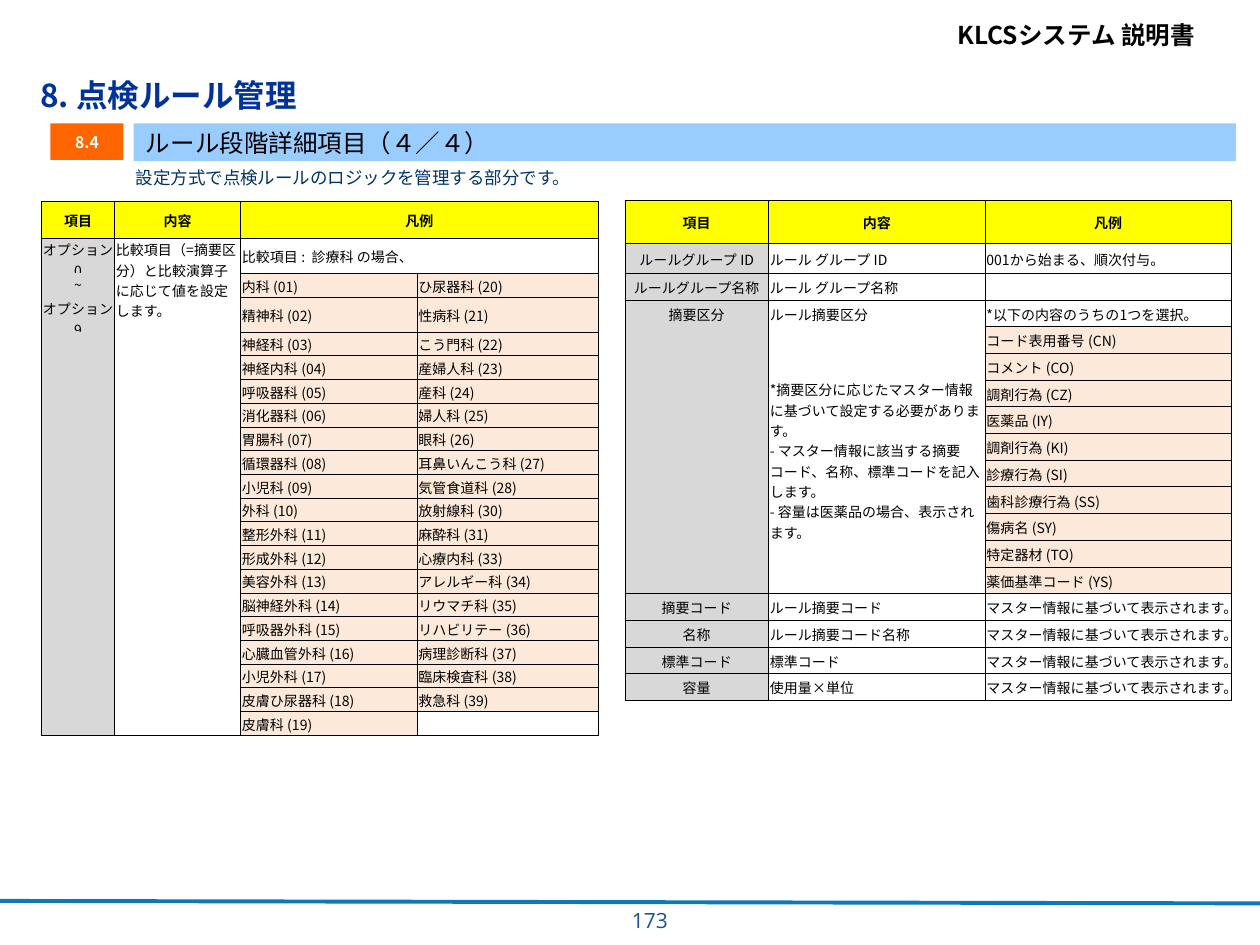
from dataclasses import dataclass

from lxml.etree import SubElement
from pptx import Presentation
from pptx.dml.color import RGBColor
from pptx.enum.shapes import MSO_CONNECTOR, MSO_SHAPE
from pptx.enum.text import MSO_ANCHOR, PP_ALIGN
from pptx.oxml.ns import qn
from pptx.util import Inches, Pt


@dataclass(frozen=True)
class Theme:
    font: str = "Noto Sans CJK JP"
    number_font: str = "Open Sans"
    black: str = "000000"
    white: str = "FFFFFF"
    title: str = "003399"
    note: str = "003366"
    page: str = "125496"
    rule: str = "0C79BC"
    badge: str = "FF6600"
    band: str = "99CCFF"
    header: str = "FFFF00"
    label: str = "D8D8D8"
    choice: str = "FDE9D9"
    table_size: float = 8
    badge_size: float = 9
    note_size: float = 10
    page_size: float = 12
    heading_size: float = 14
    title_size: float = 18


class SlideBuilder:
    def __init__(self, slide, theme):
        self.s = slide
        self.t = theme

    def add_runs(self, p, text, size, color, bold=False, font=None):
        for i, line in enumerate(text.split("\n")):
            if i:
                p.add_line_break()
            r = p.add_run()
            r.text = line
            r.font.size = Pt(size)
            r.font.bold = bold
            r.font.name = font or self.t.font
            r.font.color.rgb = RGBColor.from_string(color)
            SubElement(r.font._element, qn("a:ea"), typeface=font or self.t.font)

    def hang(self, p, indent):
        pPr = p._p.get_or_add_pPr()
        pPr.set("marL", str(Inches(indent)))
        pPr.set("indent", str(-Inches(indent)))

    def text(self, at, text, size, color, bold=False, font=None, align=PP_ALIGN.LEFT,
             wrap=True, indent=0, inset=0.05):
        tf = self.s.shapes.add_textbox(*map(Inches, at)).text_frame
        tf.word_wrap = wrap
        tf.margin_top = tf.margin_bottom = Inches(inset)
        p = tf.paragraphs[0]
        p.alignment = align
        if indent:
            self.hang(p, indent)
        self.add_runs(p, text, size, color, bold, font)

    def box(self, at, fill, text, size, color, bold=False, align=PP_ALIGN.LEFT,
            anchor=MSO_ANCHOR.MIDDLE, wrap=True, indent=0.1):
        sp = self.s.shapes.add_shape(MSO_SHAPE.RECTANGLE, *map(Inches, at))
        sp.shadow.inherit = False
        sp.fill.solid()
        sp.fill.fore_color.rgb = RGBColor.from_string(fill)
        sp.line.fill.background()
        tf = sp.text_frame
        tf.word_wrap = wrap
        tf.vertical_anchor = anchor
        p = tf.paragraphs[0]
        p.alignment = align
        self.hang(p, indent)
        self.add_runs(p, text, size, color, bold)

    def line(self, x1, y1, x2, y2, color, width):
        ln = self.s.shapes.add_connector(MSO_CONNECTOR.STRAIGHT, *map(Inches, (x1, y1, x2, y2)))
        ln.line.color.rgb = RGBColor.from_string(color)
        ln.line.width = Pt(width)
        SubElement(ln._element.spPr, qn("a:effectLst"))

    def borders(self, cell, top, bottom):
        tcPr = cell._tc.get_or_add_tcPr()
        edges = {"lnL": True, "lnR": True, "lnT": top, "lnB": bottom}
        for i, (tag, shown) in enumerate(edges.items()):
            ln = SubElement(tcPr, qn(f"a:{tag}"), w=str(Pt(0.5)))
            tcPr.remove(ln)
            tcPr.insert(i, ln)
            if shown:
                fill = SubElement(ln, qn("a:solidFill"))
                SubElement(fill, qn("a:srgbClr"), val=self.t.black)
            else:
                SubElement(ln, qn("a:noFill"))

    def table(self, left, top, cols, heights, rows, open_rows, choices, merges=(), top_cells=()):
        frame = self.s.shapes.add_table(len(rows), len(cols), Inches(left), Inches(top),
                                        Inches(sum(cols)), Inches(sum(heights)))
        tbl = frame.table
        tbl.first_row = tbl.horz_banding = False
        for col, width in zip(tbl.columns, cols):
            col.width = Inches(width)
        for row, height in zip(tbl.rows, heights):
            row.height = Inches(height)
        first, last = open_rows
        for i, texts in enumerate(rows):
            for j, text in enumerate(texts):
                cell = tbl.cell(i, j)
                cell.margin_left = cell.margin_right = cell.margin_top = Inches(0.01)
                cell.margin_bottom = 0
                cell.vertical_anchor = MSO_ANCHOR.TOP if (i, j) in top_cells else MSO_ANCHOR.MIDDLE
                if i == 0:
                    fill = self.t.header
                elif j == 0:
                    fill = self.t.label
                else:
                    fill = self.t.choice if text and j >= 2 and i in choices else self.t.white
                cell.fill.solid()
                cell.fill.fore_color.rgb = RGBColor.from_string(fill)
                inside = j < 2 and first <= i <= last
                self.borders(cell, not inside or i == first, not inside or i == last)
                p = cell.text_frame.paragraphs[0]
                p.alignment = PP_ALIGN.CENTER if i == 0 or j == 0 else PP_ALIGN.LEFT
                if text:
                    self.add_runs(p, text, self.t.table_size, self.t.black, i == 0)
                else:
                    SubElement(p._p, qn("a:endParaRPr"), sz=str(int(self.t.table_size * 100)))
        for r1, c1, r2, c2 in merges:
            tbl.cell(r1, c1).merge(tbl.cell(r2, c2))


DEPARTMENTS = [
    ("内科 (01)", "ひ尿器科 (20)"), ("精神科 (02)", "性病科 (21)"),
    ("神経科 (03)", "こう門科 (22)"), ("神経内科 (04)", "産婦人科 (23)"),
    ("呼吸器科 (05)", "産科 (24)"), ("消化器科 (06)", "婦人科 (25)"),
    ("胃腸科 (07)", "眼科 (26)"), ("循環器科 (08)", "耳鼻いんこう科 (27)"),
    ("小児科 (09)", "気管食道科 (28)"), ("外科 (10)", "放射線科 (30)"),
    ("整形外科 (11)", "麻酔科 (31)"), ("形成外科 (12)", "心療内科 (33)"),
    ("美容外科 (13)", "アレルギー科 (34)"), ("脳神経外科 (14)", "リウマチ科 (35)"),
    ("呼吸器外科 (15)", "リハビリテー (36)"), ("心臓血管外科 (16)", "病理診断科 (37)"),
    ("小児外科 (17)", "臨床検査科 (38)"), ("皮膚ひ尿器科 (18)", "救急科 (39)"),
    ("皮膚科 (19)", ""),
]
CATEGORIES = ["コード表用番号 (CN)", "コメント (CO)", "調剤行為 (CZ)", "医薬品 (IY)",
              "調剤行為 (KI)", "診療行為 (SI)", "歯科診療行為 (SS)", "傷病名 (SY)",
              "特定器材 (TO)", "薬価基準コード (YS)"]
CATEGORY_NOTE = ("*摘要区分に応じたマスター情報に基づいて設定する必要があります。\n"
                 "- マスター情報に該当する摘要コード、名称、標準コードを記入します。\n"
                 "- 容量は医薬品の場合、表示されます。")
FROM_MASTER = "マスター情報に基づいて表示されます。"


def main():
    prs = Presentation()
    prs.slide_width, prs.slide_height = Inches(10), Inches(7.5)
    t = Theme()
    b = SlideBuilder(prs.slides.add_slide(prs.slide_layouts[6]), t)

    b.line(0, 7.15, 10, 7.17, t.rule, 2.25)
    b.text((7.5, 0.11, 2.16, 0.34), "KLCSシステム 説明書", t.heading_size, t.black, True, wrap=False)
    b.text((0.22, 0.6, 9.74, 0.42), "8. 点検ルール管理", t.title_size, t.title, True,
           indent=0.62, inset=0)
    b.text((4.87, 7.15, 0.53, 0.28), "173", t.page_size, t.page, font=t.number_font,
           align=PP_ALIGN.RIGHT)

    option_labels = ["~", "オプション9"] + [""] * (len(DEPARTMENTS) - 2)
    option_rows = [
        ("項目", "内容", "凡例", ""),
        ("オプション0", "比較項目（=摘要区分）と比較演算子に応じて値を設定します。",
         "比較項目 :  診療科 の場合、", ""),
    ] + [(label, "", *pair) for label, pair in zip(option_labels, DEPARTMENTS)]
    option_heights = [0.29, 0.28, 0.19, 0.27]
    rest = len(option_rows) - len(option_heights)
    option_heights += [(4.23 - sum(option_heights)) / rest] * rest
    b.table(0.33, 1.6, [0.58, 1, 1.4, 1.44], option_heights, option_rows, (1, 20), range(2, 21),
            merges=[(0, 2, 0, 3), (1, 2, 1, 3), (1, 1, 5, 1)],
            top_cells=[(1, 0), (2, 0), (3, 0), (1, 1)])

    rule_rows = [
        ("項目", "内容", "凡例"),
        ("ルールグループ ID", "ルール グループ ID", "001から始まる、順次付与。"),
        ("ルールグループ名称", "ルール グループ名称", ""),
        ("摘要区分", "ルール摘要区分", "*以下の内容のうちの1つを選択。"),
    ]
    rule_rows += [("", CATEGORY_NOTE if i == 1 else "", name) for i, name in enumerate(CATEGORIES)]
    rule_rows += [(label, content, FROM_MASTER) for label, content in (
        ("摘要コード", "ルール摘要コード"), ("名称", "ルール摘要コード名称"),
        ("標準コード", "標準コード"), ("容量", "使用量×単位"))]
    rule_heights = [0.34, 0.24]
    rest = len(rule_rows) - len(rule_heights)
    rule_heights += [(3.97 - sum(rule_heights)) / rest] * rest
    b.table(4.96, 1.59, [1.14, 1.72, 1.95], rule_heights, rule_rows, (3, 13), range(4, 14),
            merges=[(5, 1, 12, 1)])

    b.box((0.98, 1.28, 8.62, 0.27), t.white, "設定方式で点検ルールのロジックを管理する部分です。",
          t.note_size, t.note, anchor=MSO_ANCHOR.TOP, wrap=False, indent=0.67)
    b.box((0.4, 0.98, 0.58, 0.29), t.badge, "8.4", t.badge_size, t.white, True,
          align=PP_ALIGN.CENTER)
    b.box((1.06, 0.98, 8.75, 0.3), t.band, "ルール段階詳細項目（４／４）", t.heading_size, t.black)
    prs.save("out.pptx")


if __name__ == "__main__":
    main()
